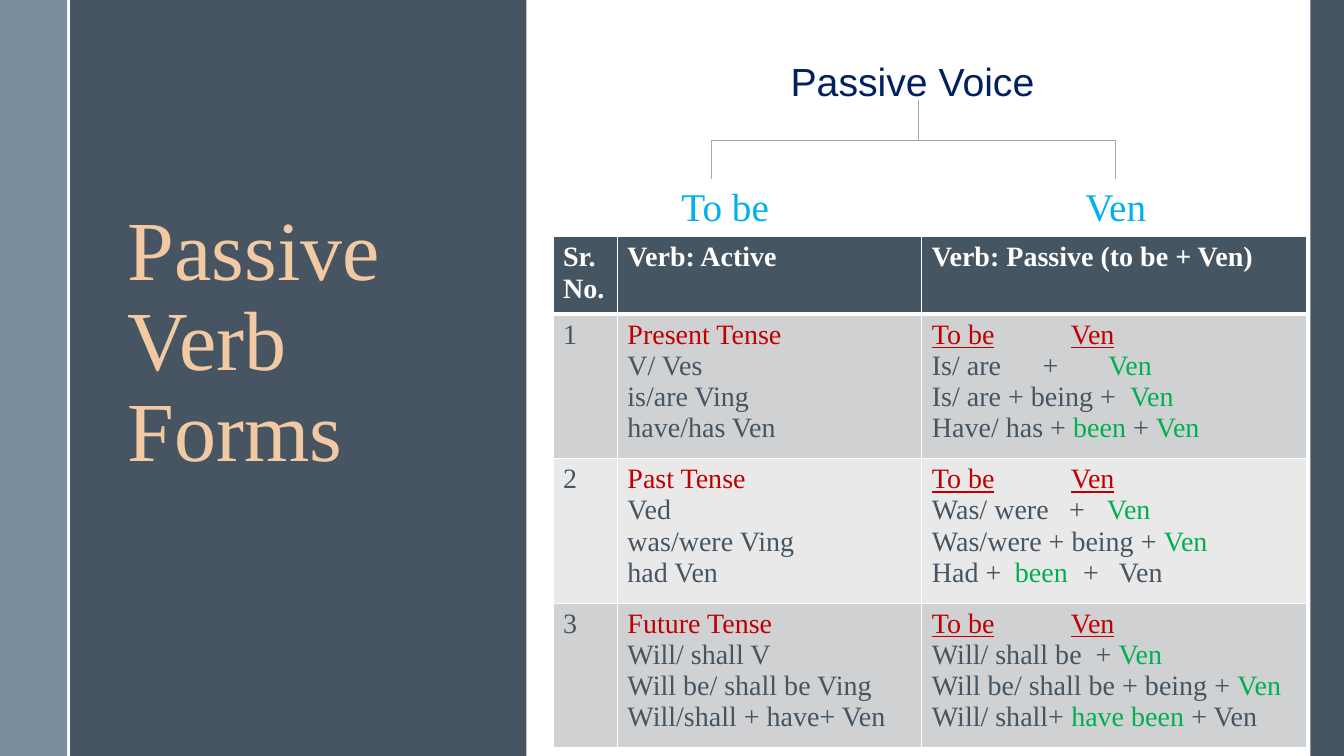
from typing import NamedTuple

from lxml import etree
from pptx import Presentation
from pptx.dml.color import RGBColor
from pptx.enum.shapes import MSO_CONNECTOR as CONN, MSO_SHAPE as SHAPE
from pptx.enum.text import MSO_ANCHOR as ANCHOR, MSO_AUTO_SIZE as AUTO, PP_ALIGN as ALIGN
from pptx.oxml.ns import qn
from pptx.util import Pt

WHITE = RGBColor(0xFF, 0xFF, 0xFF)
SLATE = RGBColor(0x47, 0x55, 0x62)
TEXT = RGBColor(0x46, 0x55, 0x62)
STEEL = RGBColor(0x79, 0x8D, 0x9E)
BRANCH = RGBColor(0x9B, 0xAA, 0xB7)
PEACH = RGBColor(0xF1, 0xC9, 0xA3)
NAVY = RGBColor(0x00, 0x20, 0x60)
CYAN = RGBColor(0x00, 0xB0, 0xF0)
RED = RGBColor(0xC0, 0x00, 0x00)
GREEN = RGBColor(0x00, 0xB0, 0x50)
BAND_DARK = RGBColor(0xCF, 0xD1, 0xD3)
BAND_LIGHT = RGBColor(0xE9, 0xE9, 0xEA)
SERIF, SANS = "Times New Roman", "Arial"


class Panel(NamedTuple):
    x: float
    w: float
    color: RGBColor


class Label(NamedTuple):
    text: str
    center: float
    y: float
    font: str
    color: RGBColor


class Line(NamedTuple):
    x1: float
    y1: float
    x2: float
    y2: float
    color: RGBColor = BRANCH
    width: float = 0.5


class Form(NamedTuple):
    """A verb form: pieces alternate between plain and green text."""
    pieces: tuple[str, ...]
    tabs: tuple[float, ...] = ()


class Tense(NamedTuple):
    name: str
    active: tuple[str, ...]
    passive: tuple[Form, ...]


PANELS = [Panel(49, 327, SLATE), Panel(0, 48, STEEL), Panel(936, 24, SLATE)]
LABELS = [
    Label("Passive Voice", 651.8, 39, SANS, NAVY),
    Label("To be", 518, 128, SERIF, CYAN),
    Label("Ven", 797, 128, SERIF, CYAN),
]
DIVIDER = Line(49, 0, 49, 540, WHITE, 1.5)
BRANCHES = [
    Line(508.3, 100, 797, 100),
    Line(508.3, 100, 508.3, 128),
    Line(655.9, 71.3, 655.9, 100),
]
VEN_BRANCH = Line(797, 100, 797, 128)

HEADERS = ["Sr. No.", "Verb: Active", "Verb: Passive (to be + Ven)"]
COL_WIDTHS = [46, 217.5, 275]
ROW_HEIGHTS = [51.7, 95.8, 95.8, 95.8]
TENSES = [
    Tense("Present Tense", ("V/ Ves", "is/are Ving", "have/has Ven"), (
        Form(("Is/ are\t+\t", "Ven"), (79, 126)),
        Form(("Is/ are + being +\t", "Ven"), (141.5,)),
        Form(("Have/ has + ", "been ", "+ ", "Ven")))),
    Tense("Past Tense", ("Ved", "was/were Ving", "had Ven"), (
        Form(("Was/ were\t+\t", "Ven"), (98, 125)),
        Form(("Was/were + being + ", "Ven")),
        Form(("Had +\t", "been", "\t+\tVen"), (59.3, 108, 133.6)))),
    Tense("Future Tense",
          ("Will/ shall V", "Will be/ shall be Ving", "Will/shall + have+ Ven"), (
              Form(("Will/ shall be\t+ ", "Ven"), (117,)),
              Form(("Will be/ shall be + being + ", "Ven")),
              Form(("Will/ shall+ ", "have been ", "+ Ven")))),
]


def style(r, color: RGBColor, size: float = 20, font: str = SERIF, bold: bool = False) -> None:
    r.font.name, r.font.size, r.font.bold = font, Pt(size), bold
    r.font.color.rgb = color


def add_panel(s, panel: Panel) -> None:
    sp = s.shapes.add_shape(SHAPE.RECTANGLE, Pt(panel.x), 0, Pt(panel.w), Pt(540))
    sp.shadow.inherit = False
    sp.fill.solid()
    sp.fill.fore_color.rgb = panel.color
    sp.line.fill.background()


def add_line(s, line: Line):
    cxn = s.shapes.add_connector(CONN.STRAIGHT, Pt(line.x1), Pt(line.y1), Pt(line.x2), Pt(line.y2))
    cxn.line.color.rgb = line.color
    cxn.line.width = Pt(line.width)
    etree.SubElement(cxn._element.spPr, qn("a:effectLst"))
    return cxn


def add_label(s, label: Label):
    sp = s.shapes.add_textbox(Pt(label.center - 100), Pt(label.y), Pt(200), Pt(34))
    tf = sp.text_frame
    tf.word_wrap = True
    tf.margin_top, tf.margin_bottom = Pt(2), 0
    p = tf.paragraphs[0]
    p.text = label.text
    p.alignment = ALIGN.CENTER
    style(p.runs[0], label.color, 28, label.font)
    return sp


def set_tabs(p, stops: tuple[float, ...]) -> None:
    if stops:
        tabs = etree.SubElement(p._p.get_or_add_pPr(), qn("a:tabLst"))
        for stop in stops:
            etree.SubElement(tabs, qn("a:tab"), pos=str(int(Pt(stop))), algn="l")


def format_cell(cell, fill: RGBColor, bottom: float = 1, top: float = 1) -> None:
    tcPr = cell._tc.get_or_add_tcPr()
    for side, width in (("L", 1), ("R", 1), ("T", top), ("B", bottom)):
        ln = etree.SubElement(tcPr, qn(f"a:ln{side}"), w=str(int(Pt(width))))
        solid = etree.SubElement(ln, qn("a:solidFill"))
        etree.SubElement(solid, qn("a:srgbClr"), val=str(WHITE))
    cell.fill.solid()
    cell.fill.fore_color.rgb = fill


def fill_cell(cell, heading: str, forms: list[Form], tabs: tuple[float, ...] = (),
              underline: bool = False) -> None:
    tf = cell.text_frame
    p = tf.paragraphs[0]
    p.text = heading
    set_tabs(p, tabs)
    style(p.runs[0], RED)
    p.runs[0].font.underline = underline
    for form in forms:
        p = tf.add_paragraph()
        set_tabs(p, form.tabs)
        for i, piece in enumerate(form.pieces):
            r = p.add_run()
            r.text = piece
            style(r, GREEN if i % 2 else TEXT)


def add_verb_table(s) -> None:
    table = s.shapes.add_table(len(ROW_HEIGHTS), len(COL_WIDTHS), Pt(395), Pt(169.2),
                               Pt(sum(COL_WIDTHS)), Pt(sum(ROW_HEIGHTS))).table
    for col, width in zip(table.columns, COL_WIDTHS):
        col.width = Pt(width)
    for row, height in zip(table.rows, ROW_HEIGHTS):
        row.height = Pt(height)
    for cell, header in zip(table.rows[0].cells, HEADERS):
        cell.text_frame.text = header
        style(cell.text_frame.paragraphs[0].runs[0], WHITE, bold=True)
        format_cell(cell, TEXT, bottom=3)
    for n, tense in enumerate(TENSES, 1):
        number, active, passive = table.rows[n].cells
        number.text_frame.text = str(n)
        style(number.text_frame.paragraphs[0].runs[0], TEXT)
        fill_cell(active, tense.name, [Form((verb,)) for verb in tense.active])
        fill_cell(passive, "To be\tVen", list(tense.passive), (99.3,), underline=True)
        for cell in (number, active, passive):
            format_cell(cell, BAND_DARK if n % 2 else BAND_LIGHT, top=3 if n == 1 else 1)


def add_title(s) -> None:
    title = s.shapes.title
    title.left, title.top, title.width, title.height = Pt(84.2), Pt(144), Pt(259), Pt(342)
    tf = title.text_frame
    tf.text = "Passive Verb Forms"
    tf.word_wrap, tf.auto_size, tf.vertical_anchor = True, AUTO.NONE, ANCHOR.TOP
    p = tf.paragraphs[0]
    p.alignment, p.line_spacing = ALIGN.LEFT, Pt(64.7)
    style(p.runs[0], PEACH, 60)


def main() -> None:
    prs = Presentation()
    prs.slide_width, prs.slide_height = Pt(960), Pt(540)
    s = prs.slides.add_slide(prs.slide_layouts[5])
    # Side panels, with the title above them in the stack
    for panel in PANELS:
        add_panel(s, panel)
    add_line(s, DIVIDER)
    add_title(s)
    s.shapes._spTree.append(s.shapes.title._element)
    # Passive voice tree
    *_, ven = [add_label(s, label) for label in LABELS]
    for branch in BRANCHES:
        add_line(s, branch)
    add_line(s, VEN_BRANCH).end_connect(ven, 0)
    # Verb forms
    add_verb_table(s)
    prs.save("out.pptx")


if __name__ == "__main__":
    main()
